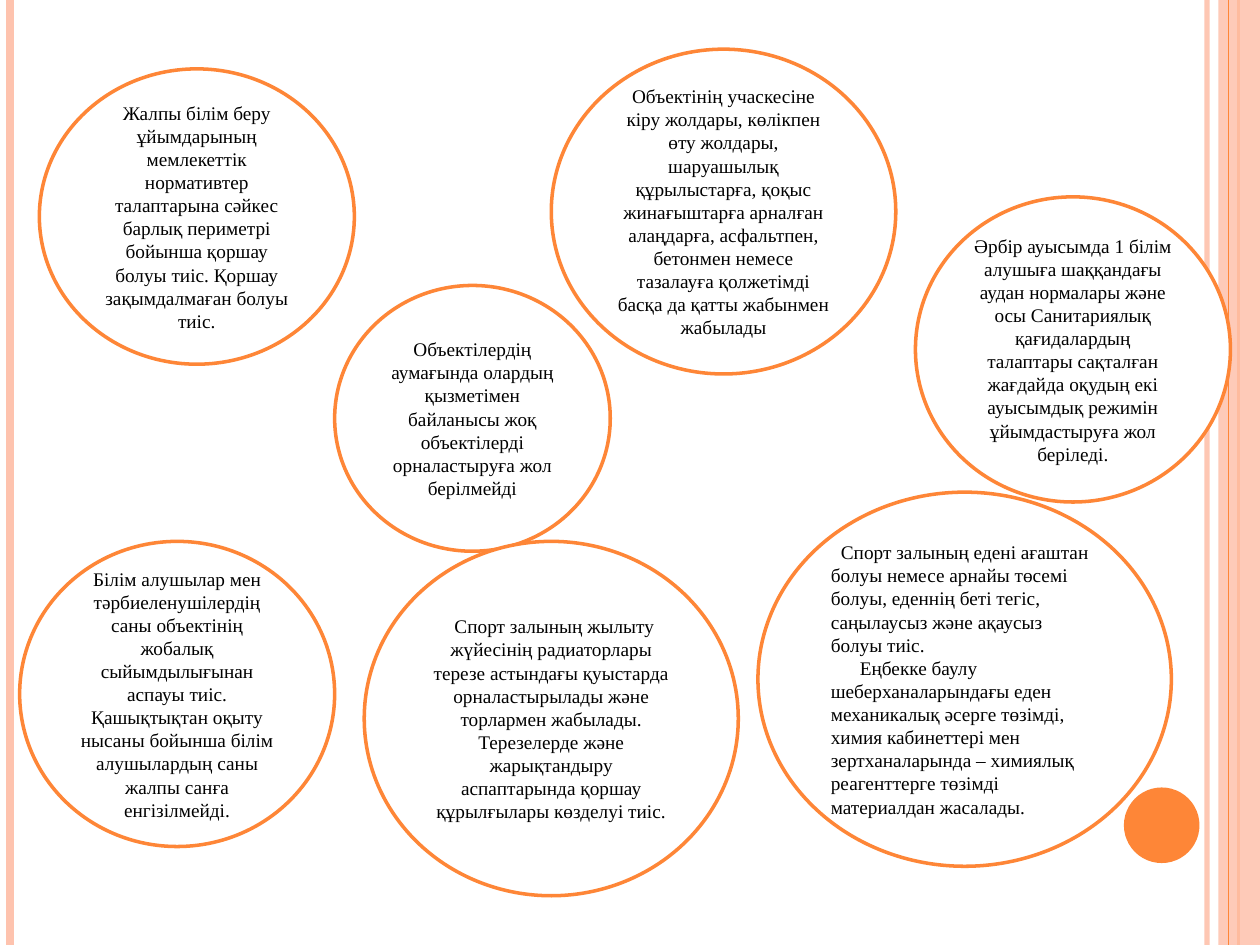
from lxml.etree import SubElement
from pptx import Presentation
from pptx.dml.color import RGBColor
from pptx.enum.shapes import MSO_CONNECTOR, MSO_SHAPE
from pptx.enum.text import MSO_ANCHOR, PP_ALIGN
from pptx.oxml.ns import qn
from pptx.util import Inches, Pt

COLORS = {"orange": "FE8637", "peach": "FEC3AE", "white": "FFFFFF", "ink": "000000"}
WIDE, HIGH = 10, 7.5
CELL = WIDE / 64
FONT = "Times New Roman"

RAILS = [
    (9.58, "peach", 3, 93),
    (0.08, "peach", 4.5, 100),
    (9.83, "orange", 1.5, 100),
]
SEAM = (9.75, "orange", 0.75, 100)

BUBBLES = [
    ((2, 3.5, 16, 15), [
        "Жалпы білім беру ұйымдарының мемлекеттік нормативтер талаптарына сәйкес "
        "барлық периметрі бойынша қоршау болуы тиіс. Қоршау зақымдалмаған болуы тиіс."], {}),
    ((28, 2.5, 17.5, 16.5), [
        "Объектінің учаскесіне кіру жолдары, көлiкпен өту жолдары, шаруашылық "
        "құрылыстарға, қоқыс жинағыштарға арналған алаңдарға, асфальтпен, бетонмен "
        "немесе тазалауға қолжетімді басқа да қатты жабынмен жабылады"], {}),
    ((17, 14.5, 14, 13.5), [
        "Объектілердің аумағында олардың қызметiмен байланысы жоқ объектілерді "
        "орналастыруға жол берілмейді"], {}),
    ((1, 27.5, 16, 15.5), [
        "Білім алушылар мен тәрбиеленушілердің саны объектінің жобалық "
        "сыйымдылығынан аспауы тиіс. Қашықтықтан оқыту нысаны бойынша білім "
        "алушылардың саны жалпы санға енгізілмейді."], {}),
    ((46.5, 10, 16, 15.5), [
        "Әрбір ауысымда 1 білім алушыға шаққандағы аудан нормалары және осы "
        "Санитариялық қағидалардың талаптары сақталған жағдайда оқудың екі "
        "ауысымдық режимін ұйымдастыруға жол беріледі."], {}),
    ((18.5, 27.5, 19, 18), [
        "Спорт залының жылыту жүйесінің радиаторлары терезе астындағы қуыстарда "
        "орналастырылады және торлармен жабылады. Терезелерде және жарықтандыру "
        "аспаптарында қоршау құрылғылары көзделуі тиіс."], {"indents": [0.05]}),
    ((38.5, 25, 21, 19), [
        "Спорт залының едені ағаштан болуы немесе арнайы төсемі болуы, еденнің "
        "беті тегіс, саңылаусыз және ақаусыз болуы тиіс.",
        "Еңбекке баулу шеберханаларындағы еден механикалық әсерге төзімді, химия "
        "кабинеттері мен зертханаларында – химиялық реагенттерге төзімді "
        "материалдан жасалады."], {"align": PP_ALIGN.LEFT, "indents": [0.08, 0.23]}),
]


def tint(name):
    """Return the named colour."""
    return RGBColor.from_string(COLORS[name])


def fade(shape, alpha):
    """Give the first solid colour of a shape its opacity in percent."""
    color = next(shape._element.spPr.iter(qn("a:srgbClr")))
    SubElement(color, qn("a:alpha")).set("val", str(alpha * 1000))


def write(shape, texts, align=PP_ALIGN.CENTER, size=11, color="ink", indents=(0,)):
    """Fill a shape with formatted paragraphs."""
    frame = shape.text_frame
    frame.word_wrap = True
    frame.vertical_anchor = MSO_ANCHOR.MIDDLE
    frame.text = "\n".join(texts)
    for para, indent in zip(frame.paragraphs, indents):
        para.alignment = align
        para._p.get_or_add_pPr().set("indent", str(Inches(indent)))
        font = para.runs[0].font
        font.name, font.size = FONT, Pt(size)
        font.color.rgb = tint(color)


def draw(slide, kind, box, fill, line=None):
    """Add a flat preset shape in a box given in inches."""
    shape = slide.shapes.add_shape(kind, *map(Inches, box))
    shape.shadow.inherit = False
    shape.fill.solid()
    shape.fill.fore_color.rgb = tint(fill)
    if line:
        shape.line.color.rgb = tint(line)
        shape.line.width = Pt(2)
    else:
        shape.line.fill.background()
    return shape


def rail(slide, left, color, width, alpha):
    """Add a vertical line over the full height."""
    x = Inches(left)
    line = slide.shapes.add_connector(MSO_CONNECTOR.STRAIGHT, x, 0, x, Inches(HIGH))
    line.line.color.rgb = tint(color)
    line.line.width = Pt(width)
    SubElement(line._element.spPr, qn("a:effectLst"))
    if alpha < 100:
        fade(line, alpha)


def frame(slide):
    """Draw the side rails, the right band and the dot."""
    for item in RAILS:
        rail(slide, *item)
    band = draw(slide, MSO_SHAPE.RECTANGLE, (9.67, 0, 0.33, HIGH), "peach")
    fade(band, 87)
    rail(slide, *SEAM)
    draw(slide, MSO_SHAPE.OVAL, (8.92, 6.25, 0.6, 0.6), "orange")


def bubble(slide, box, texts, style):
    """Draw one outlined ellipse with its text in a box of grid cells."""
    place = [CELL * part for part in box]
    write(draw(slide, MSO_SHAPE.OVAL, place, "white", "orange"), texts, **style)


def main():
    """Build and save the slide."""
    deck = Presentation()
    deck.slide_width, deck.slide_height = Inches(WIDE), Inches(HIGH)
    slide = deck.slides.add_slide(deck.slide_layouts[6])
    frame(slide)
    for item in BUBBLES:
        bubble(slide, *item)
    deck.save("out.pptx")


if __name__ == "__main__":
    main()
